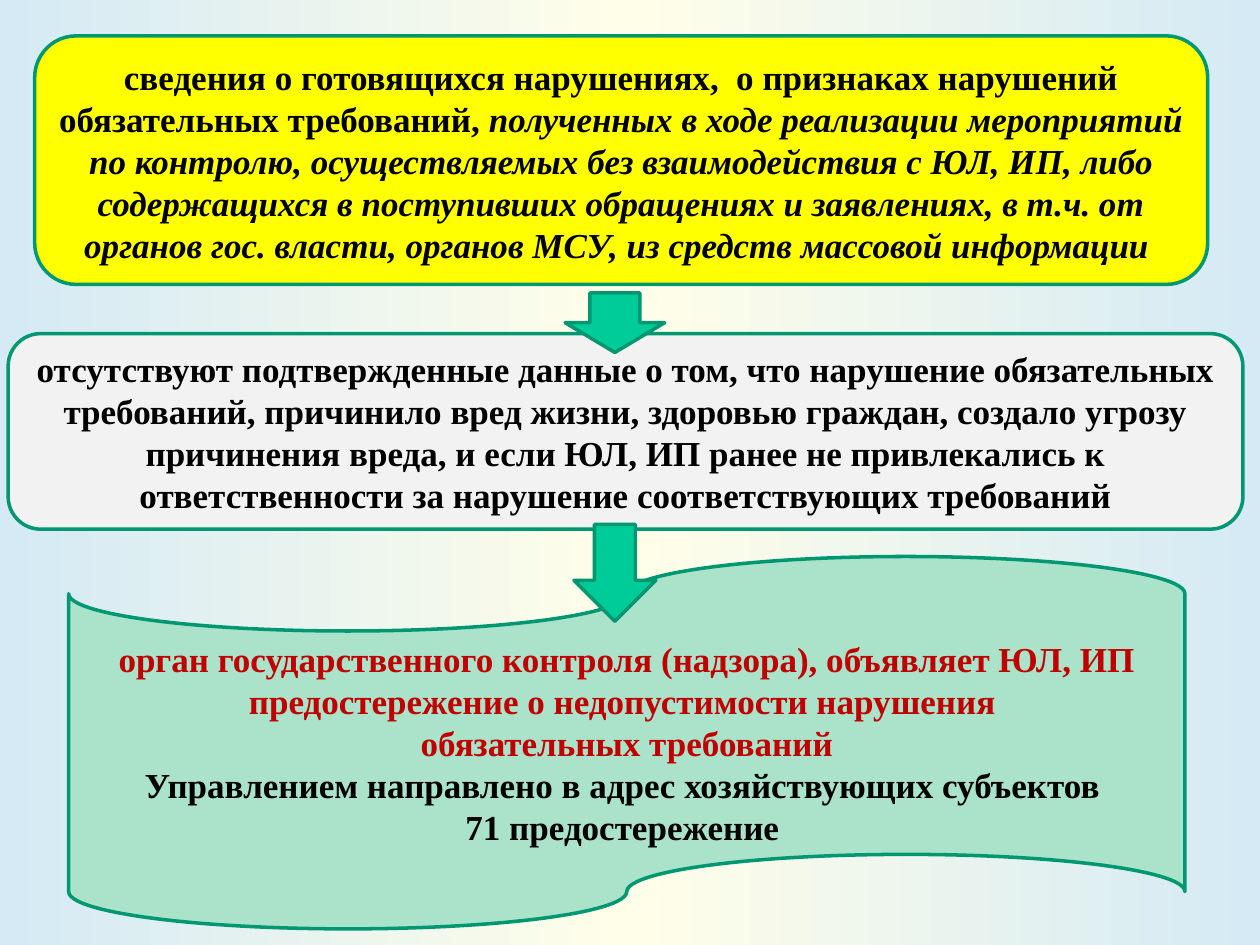
from copy import deepcopy

from pptx import Presentation
from pptx.dml.color import RGBColor
from pptx.enum.shapes import MSO_SHAPE
from pptx.enum.text import MSO_ANCHOR, MSO_AUTO_SIZE, PP_ALIGN
from pptx.oxml.ns import qn
from pptx.util import Inches, Pt

WIDTH, HEIGHT = 10, 7.5
BLACK, RED, GREEN, EDGE = "000000", "C00000", "00CC99", "009771"
FONT = {"name": "Times New Roman", "size": Pt(20), "bold": True}
FRAME = {"word_wrap": True, "vertical_anchor": MSO_ANCHOR.MIDDLE,
         "auto_size": MSO_AUTO_SIZE.SHAPE_TO_FIT_TEXT,
         "margin_left": Inches(0.07), "margin_right": Inches(0.07)}

SIGNALS = [[
    ("сведения о готовящихся нарушениях,  о признаках нарушений "
     "обязательных требований, ", BLACK, False),
    ("полученных в ходе реализации мероприятий по контролю, осуществляемых "
     "без взаимодействия с ЮЛ, ИП, либо содержащихся в поступивших обращениях "
     "и заявлениях, в т.ч. от органов гос. власти, органов МСУ, из средств "
     "массовой информации ", BLACK, True),
]]
CONDITIONS = [[
    ("отсутствуют подтвержденные данные о том, что нарушение обязательных "
     "требований, причинило вред жизни, здоровью граждан, создало угрозу "
     "причинения вреда, и если ЮЛ, ИП ранее не привлекались к "
     "ответственности за нарушение соответствующих требований", BLACK, False),
]]
WARNING = [
    [("орган государственного контроля (надзора), объявляет ЮЛ, ИП "
      "предостережение о недопустимости нарушения ", RED, False)],
    [("обязательных требований", RED, False)],
    [("Управлением направлено в адрес хозяйствующих субъектов ", BLACK, False)],
    [("71 предостережение ", BLACK, False)],
]


def rgb(value):
    return RGBColor.from_string(value)


def apply(target, values):
    for name, value in values.items():
        setattr(target, name, value)


def paint_background(s, colors):
    fill = s.background.fill
    fill.gradient()
    fill.gradient_angle = 0
    stops = next(s.background._cSld.iter(qn("a:gsLst")))
    while len(stops) < len(colors):
        stops.append(deepcopy(stops[-1]))
    for i, (stop, color) in enumerate(zip(fill.gradient_stops, colors)):
        stop.position = i / (len(colors) - 1)
        stop.color.rgb = rgb(color)


def add_block(s, kind, percent_box, color):
    sides = (WIDTH, HEIGHT, WIDTH, HEIGHT)
    box = [Inches(share * side / 100) for share, side in zip(percent_box, sides)]
    sp = s.shapes.add_shape(kind, *box)
    sp.shadow.inherit = False
    sp.fill.solid()
    sp.fill.fore_color.rgb = rgb(color)
    sp.line.color.rgb = rgb(EDGE)
    sp.line.width = Pt(2)
    return sp


def add_step(s, kind, percent_box, color, paragraphs):
    tf = add_block(s, kind, percent_box, color).text_frame
    apply(tf, FRAME)
    for i, runs in enumerate(paragraphs):
        p = tf.add_paragraph() if i else tf.paragraphs[0]
        p.alignment = PP_ALIGN.CENTER
        for text, ink, italic in runs:
            r = p.add_run()
            r.text = text
            apply(r.font, FONT | {"italic": italic})
            r.font.color.rgb = rgb(ink)


def main():
    prs = Presentation()
    prs.slide_width, prs.slide_height = Inches(WIDTH), Inches(HEIGHT)
    s = prs.slides.add_slide(prs.slide_layouts[6])
    paint_background(s, ["D5EAF5", "FFFEE9", "D5EAF5"])

    rounded = MSO_SHAPE.FLOWCHART_ALTERNATE_PROCESS
    tape = MSO_SHAPE.FLOWCHART_PUNCHED_TAPE
    steps = [
        (rounded, (2.75, 3.8, 93.1, 26.3), "FFFF00", SIGNALS),
        (rounded, (0.65, 35.3, 98, 20.7), "F2F2F2", CONDITIONS),
        (tape, (5.45, 58.9, 88.6, 39.4), "AAE2CA", WARNING),
    ]
    for step in steps:
        add_step(s, *step)
    for box in [(44.85, 31, 7.9, 6.3), (45.55, 55.5, 6.5, 10.25)]:
        add_block(s, MSO_SHAPE.DOWN_ARROW, box, GREEN)
    prs.save("out.pptx")


if __name__ == "__main__":
    main()
